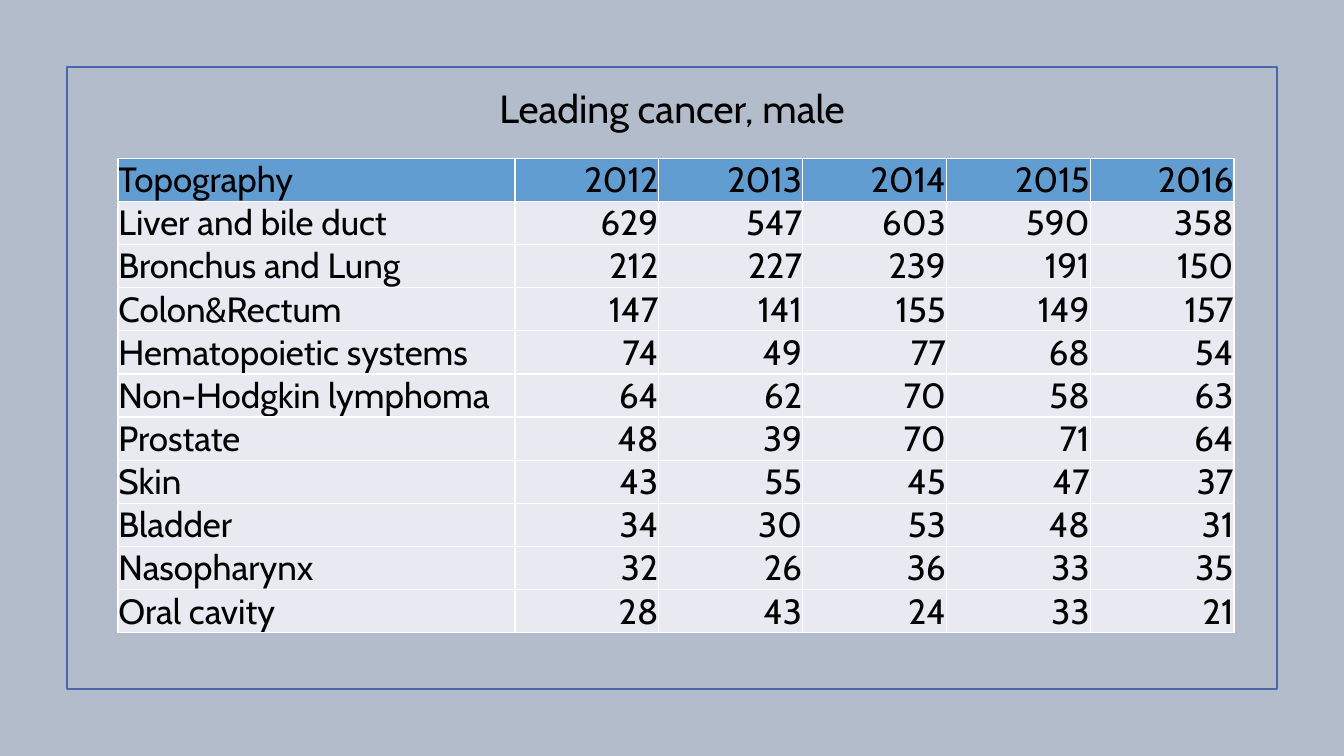
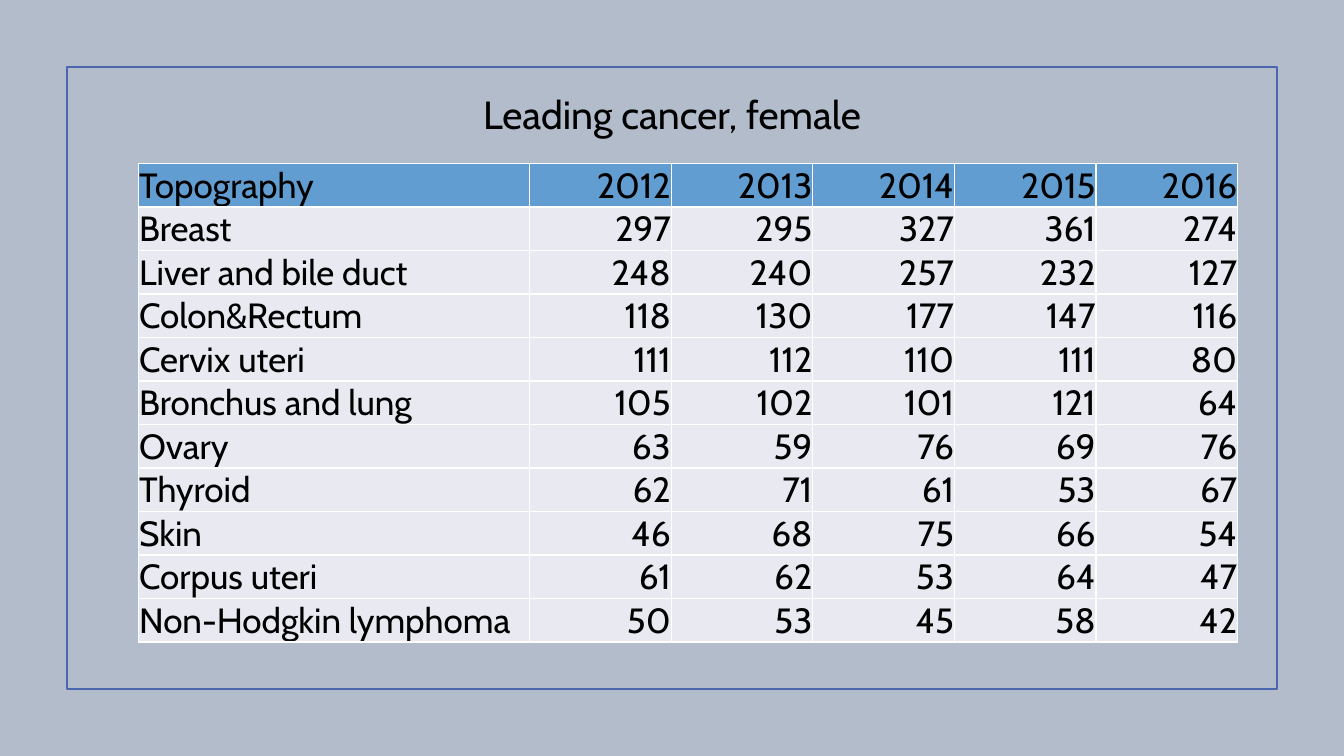
from dataclasses import dataclass

from lxml import etree
from pptx import Presentation
from pptx import util as u
from pptx.dml.color import RGBColor
from pptx.enum import shapes, text
from pptx.oxml.ns import qn
from pptx.slide import Slide
from pptx.table import _Cell as Cell
from pptx.text.text import _Paragraph as Para


# Theme: colours, type and line sizes
@dataclass(frozen=True)
class Theme:
    back: str = "B2BCCB"
    frame: str = "4A66AC"
    head: str = "629DD1"
    body: str = "E9EAF1"
    rule: str = "FFFFFF"
    ink: str = "000000"
    font: str = "Cabin"
    title: float = 28
    cell: float = 25
    edge: float = 1.25
    grid: float = 1
    pad: float = 0.4


@dataclass(frozen=True)
class Box:
    """A place on the slide, in grid columns and rows."""
    x: float
    y: float
    w: float
    h: float


@dataclass(frozen=True)
class Page:
    """A titled table; lengths in grid columns and rows."""
    title: str
    top: float
    x: float
    y: float
    first: float
    year: float
    row: float
    data: list[tuple[str, list[int]]]


THEME = Theme()
COLS, ROWS = 80, 45
UNIT = u.Inches(1) / 6
FRAME = Box(4, 4, COLS - 8, 37)
YEARS = list(range(2012, 2017))

# Cases by site and year
PAGES = [
    Page("Leading cancer, male", 4.7, 7.02, 9.42, 23.64, 8.56, 2.57, [
        ("Liver and bile duct", [629, 547, 603, 590, 358]),
        ("Bronchus and Lung", [212, 227, 239, 191, 150]),
        ("Colon&Rectum", [147, 141, 155, 149, 157]),
        ("Hematopoietic systems", [74, 49, 77, 68, 54]),
        ("Non-Hodgkin lymphoma", [64, 62, 70, 58, 63]),
        ("Prostate", [48, 39, 70, 71, 64]),
        ("Skin", [43, 55, 45, 47, 37]),
        ("Bladder", [34, 30, 53, 48, 31]),
        ("Nasopharynx", [32, 26, 36, 33, 35]),
        ("Oral cavity", [28, 43, 24, 33, 21]),
    ]),
    Page("Leading cancer, female", 5.1, 8.25, 9.73, 23.28, 8.43, 2.59, [
        ("Breast", [297, 295, 327, 361, 274]),
        ("Liver and bile duct", [248, 240, 257, 232, 127]),
        ("Colon&Rectum", [118, 130, 177, 147, 116]),
        ("Cervix uteri", [111, 112, 110, 111, 80]),
        ("Bronchus and lung", [105, 102, 101, 121, 64]),
        ("Ovary", [63, 59, 76, 69, 76]),
        ("Thyroid", [62, 71, 61, 53, 67]),
        ("Skin", [46, 68, 75, 66, 54]),
        ("Corpus uteri", [61, 62, 53, 64, 47]),
        ("Non-Hodgkin lymphoma", [50, 53, 45, 58, 42]),
    ]),
]


def span(n: float) -> u.Emu:
    return u.Emu(round(n * UNIT))


def place(box: Box) -> tuple[u.Emu, u.Emu, u.Emu, u.Emu]:
    return span(box.x), span(box.y), span(box.w), span(box.h)


def rgb(code: str) -> RGBColor:
    return RGBColor.from_string(code)


def write(para: Para, words: str, size: float, align: text.PP_ALIGN) -> None:
    para.alignment = align
    run = para.add_run()
    run.text = words
    font = run.font
    font.name, font.size, font.bold = THEME.font, u.Pt(size), False
    font.color.rgb = rgb(THEME.ink)


# Outline round the page
def frame(slide: Slide) -> None:
    shape = slide.shapes.add_shape(shapes.MSO_SHAPE.RECTANGLE, *place(FRAME))
    shape.shadow.inherit = False
    shape.fill.background()
    shape.line.color.rgb = rgb(THEME.frame)
    shape.line.width = u.Pt(THEME.edge)


def title(slide: Slide, page: Page) -> None:
    wide = 27
    box = Box((COLS - wide) / 2, page.top, wide, 3.4)
    body = slide.shapes.add_textbox(*place(box)).text_frame
    body.word_wrap = True
    body.auto_size = text.MSO_AUTO_SIZE.SHAPE_TO_FIT_TEXT
    write(body.paragraphs[0], page.title, THEME.title, text.PP_ALIGN.CENTER)


# Cell borders have no public method
def rules(cell: Cell) -> None:
    props = cell._tc.get_or_add_tcPr()
    for side in ("lnL", "lnR", "lnT", "lnB"):
        line = etree.SubElement(props, qn(f"a:{side}"), w=str(u.Pt(THEME.grid)))
        fill = etree.SubElement(line, qn("a:solidFill"))
        etree.SubElement(fill, qn("a:srgbClr"), val=THEME.rule)


def fill(cell: Cell, words: str, tint: str, align: text.PP_ALIGN) -> None:
    rules(cell)
    cell.fill.solid()
    cell.fill.fore_color.rgb = rgb(tint)
    cell.vertical_anchor = text.MSO_ANCHOR.BOTTOM
    cell.margin_left = cell.margin_right = cell.margin_top = u.Pt(THEME.pad)
    cell.margin_bottom = 0
    write(cell.text_frame.paragraphs[0], words, THEME.cell, align)


def table(slide: Slide, page: Page) -> None:
    lines = [("Topography", YEARS), *page.data]
    wides = [page.first] + [page.year] * len(YEARS)
    box = Box(page.x, page.y, sum(wides), page.row * len(lines))
    grid = slide.shapes.add_table(len(lines), len(wides), *place(box)).table
    grid.first_row = grid.horz_banding = False
    for col, wide in zip(grid.columns, wides):
        col.width = span(wide)
    for r, (site, counts) in enumerate(lines):
        grid.rows[r].height = span(page.row)
        tint = THEME.body if r else THEME.head
        for c, item in enumerate([site, *counts]):
            align = text.PP_ALIGN.RIGHT if c else text.PP_ALIGN.LEFT
            fill(grid.cell(r, c), str(item), tint, align)


def main() -> None:
    deck = Presentation()
    deck.slide_width, deck.slide_height = span(COLS), span(ROWS)
    back = deck.slide_master.background.fill
    back.solid()
    back.fore_color.rgb = rgb(THEME.back)
    for page in PAGES:
        slide = deck.slides.add_slide(deck.slide_layouts[6])
        frame(slide)
        title(slide, page)
        table(slide, page)
    deck.save("out.pptx")


if __name__ == "__main__":
    main()
